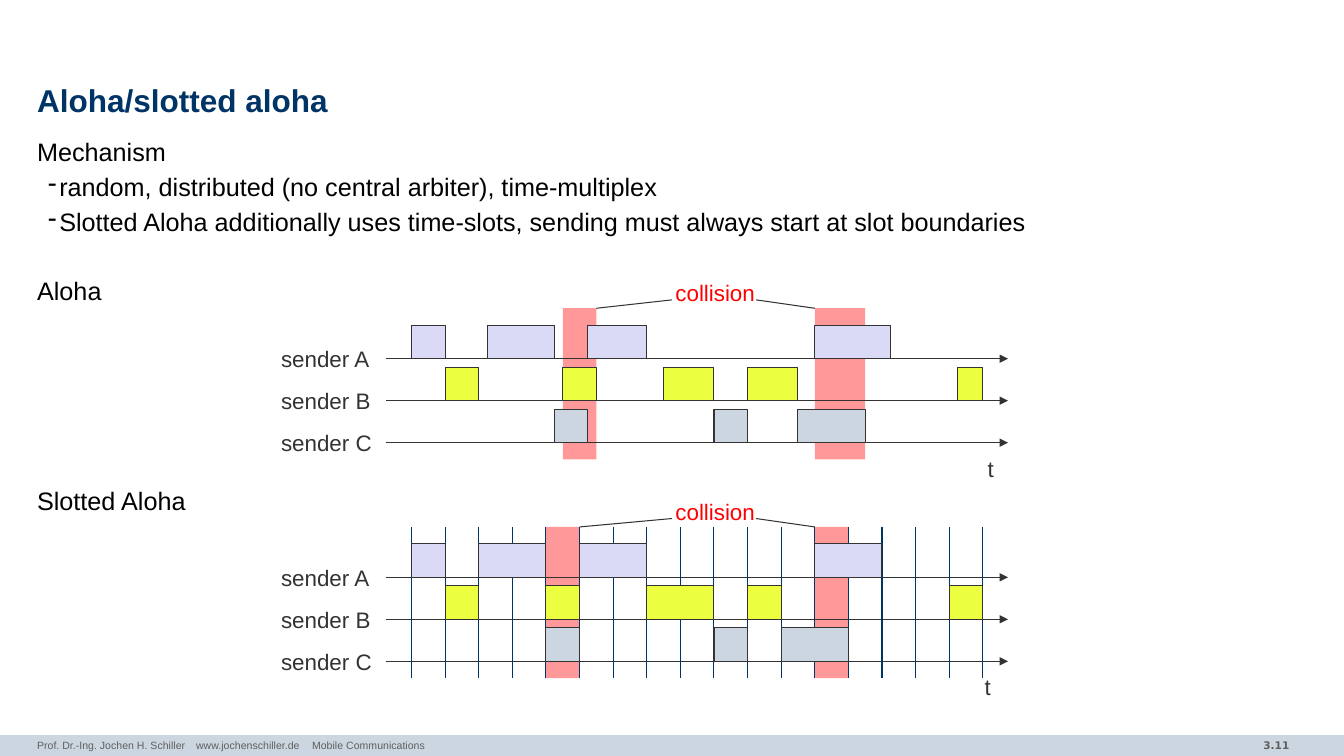
from dataclasses import dataclass

from lxml import etree
from pptx import Presentation
from pptx import util as u
from pptx.dml.color import RGBColor
from pptx.enum import shapes, text
from pptx.oxml import ns


@dataclass(frozen=True)
class Theme:
    face: str = "Arial"
    number_face: str = "DejaVu Sans"
    title: str = "003366"
    body: str = "000000"
    footer: str = "5F5F5F"
    ink: str = "333333"
    alert: str = "FF0000"
    clash: str = "FF9999"
    grid: str = "003366"
    bar: str = "CCD6E0"
    senders: tuple = (("A", "DADAF6"), ("B", "ECFE40"), ("C", "CCD6E0"))
    title_size: float = 22.5
    body_size: float = 18
    label_size: float = 16
    footer_size: float = 7.5
    stroke: float = 0.75


THEME = Theme()
SLOT = 24
QUARTER = SLOT / 4
SLOT_COUNT = 17
START = 294
ROW_STEP = 30
CHART_HEIGHT = 108

ALOHA_PACKETS = (
    ((0, 4), (9, 8), (21, 7), (48, 9)),
    ((4, 4), (18, 4), (30, 6), (40, 6), (65, 3)),
    ((17, 4), (36, 4), (46, 8)),
)
SLOTTED_PACKETS = (
    ((0, 4), (8, 8), (20, 8), (48, 8)),
    ((4, 4), (16, 4), (28, 8), (40, 4), (64, 4)),
    ((16, 4), (36, 4), (44, 8)),
)
MECHANISM = (
    ("Mechanism", False, 0),
    ("random, distributed (no central arbiter), time-multiplex", True, 3),
    ("Slotted Aloha additionally uses time-slots, sending must always start at slot boundaries", True, 3),
    ("Aloha", False, 27.2),
    ("Slotted Aloha", False, 127.4),
)


def quarter_x(quarters):
    return START + quarters * QUARTER


def add_child(parent, tag, **attributes):
    return etree.SubElement(parent, ns.qn(tag), attributes)


def add_rect(page, left, top, width, height, fill, outlined=False):
    rect = page.shapes.add_shape(
        shapes.MSO_SHAPE.RECTANGLE, u.Pt(left), u.Pt(top), u.Pt(width), u.Pt(height))
    rect.shadow.inherit = False
    rect.fill.solid()
    rect.fill.fore_color.rgb = RGBColor.from_string(fill)
    if outlined:
        rect.line.color.rgb = RGBColor.from_string(THEME.ink)
        rect.line.width = u.Pt(THEME.stroke)
    else:
        rect.line.fill.background()


def add_line(page, x1, y1, x2, y2, color=THEME.ink, arrow=False):
    line = page.shapes.add_connector(
        shapes.MSO_CONNECTOR.STRAIGHT, u.Pt(x1), u.Pt(y1), u.Pt(x2), u.Pt(y2))
    line.line.color.rgb = RGBColor.from_string(color)
    line.line.width = u.Pt(THEME.stroke)
    if arrow:
        add_child(line.line._get_or_add_ln(), "a:tailEnd", type="triangle")
    add_child(line._element.spPr, "a:effectLst")


def add_box(page, left, top, width, height, insets=(7.2, 3.6), wrap=True,
            anchor=text.MSO_ANCHOR.MIDDLE):
    box = page.shapes.add_textbox(u.Pt(left), u.Pt(top), u.Pt(width), u.Pt(height))
    frame = box.text_frame
    frame.word_wrap = wrap
    frame.vertical_anchor = anchor
    frame.margin_left = frame.margin_right = u.Pt(insets[0])
    frame.margin_top = frame.margin_bottom = u.Pt(insets[1])
    return frame


def write(para, words, size, color, face=THEME.face, bold=False, align=text.PP_ALIGN.LEFT):
    para.add_run().text = words
    para.alignment = align
    para.font.name = face
    para.font.size = u.Pt(size)
    para.font.bold = bold
    para.font.color.rgb = RGBColor.from_string(color)


def add_label(page, words, left, top, width, color=THEME.ink, align=text.PP_ALIGN.CENTER):
    frame = add_box(page, left, top, width, 26.6, wrap=False)
    write(frame.paragraphs[0], words, THEME.label_size, color, align=align)


def add_title(page):
    para = add_box(page, 26.5, 56.7, 907, 33.8, insets=(0, 0)).paragraphs[0]
    para.line_spacing = 0.85
    write(para, "Aloha/slotted aloha", THEME.title_size, THEME.title, bold=True)


def add_body(page):
    frame = add_box(page, 26.5, 97.2, 907, 413, insets=(0, 0), anchor=text.MSO_ANCHOR.TOP)
    for index, (words, bulleted, gap) in enumerate(MECHANISM):
        para = frame.add_paragraph() if index else frame.paragraphs[0]
        if bulleted:
            props = para._p.get_or_add_pPr()
            props.set("marL", str(u.Pt(15.84)))
            props.set("indent", str(u.Pt(-7.92)))
            add_child(props, "a:buChar", char="-")
        para.line_spacing = 1.02
        if gap:
            para.space_before = u.Pt(gap)
        write(para, words, THEME.body_size, THEME.body)


def add_footer(page):
    add_rect(page, 0, 525, 960, 15, THEME.bar)
    number = add_box(page, 799.2, 524.2, 128.9, 16.6).paragraphs[0]
    write(number, "3.11", THEME.footer_size, THEME.footer, THEME.number_face, True,
          text.PP_ALIGN.RIGHT)
    credit = add_box(page, 26.5, 524.2, 628, 16.2, insets=(0, 3.6)).paragraphs[0]
    tabs = add_child(credit._p.get_or_add_pPr(), "a:tabLst")
    for stop in (113.6, 196.4):
        add_child(tabs, "a:tab", pos=str(u.Pt(stop)), algn="l")
    write(credit, "Prof. Dr.-Ing. Jochen H. Schiller\twww.jochenschiller.de\tMobile Communications",
          THEME.footer_size, THEME.footer)


def add_timeline(page, top, packets, collisions, time_left, slotted=False):
    for start, length in collisions:
        add_rect(page, quarter_x(start), top, length * QUARTER, CHART_HEIGHT, THEME.clash)
    for row, (sender, _) in enumerate(THEME.senders):
        axis = top + 36 + row * ROW_STEP
        add_line(page, 276, axis, 720, axis, arrow=True)
        add_label(page, f"sender {sender}", 193.7, axis - 13.3, 82, align=text.PP_ALIGN.LEFT)
    if slotted:
        for slot in range(SLOT_COUNT + 1):
            x = START + slot * SLOT
            add_line(page, x, top, x, top + CHART_HEIGHT, THEME.grid)
    for row, ((_, fill), sent) in enumerate(zip(THEME.senders, packets)):
        for start, length in sent:
            add_rect(page, quarter_x(start), top + 12 + row * ROW_STEP,
                     length * QUARTER, SLOT, fill, outlined=True)
    add_label(page, "collision", 475.2, top - 24.2, 71.3, THEME.alert)
    first, second = collisions
    add_line(page, quarter_x(sum(first)), top, 480, top - 6)
    add_line(page, quarter_x(second[0]), top, 540, top - 6)
    add_label(page, "t", time_left, top + 101, 18.7)


def main():
    deck = Presentation()
    deck.slide_width, deck.slide_height = u.Pt(960), u.Pt(540)
    page = deck.slides.add_slide(deck.slide_layouts[6])
    add_footer(page)
    add_title(page)
    add_body(page)
    add_timeline(page, 220.2, ALOHA_PACKETS, ((18, 4), (48, 6)), 698.4)
    add_timeline(page, 376.4, SLOTTED_PACKETS, ((16, 4), (48, 4)), 696.2, slotted=True)
    deck.save("out.pptx")


if __name__ == "__main__":
    main()
